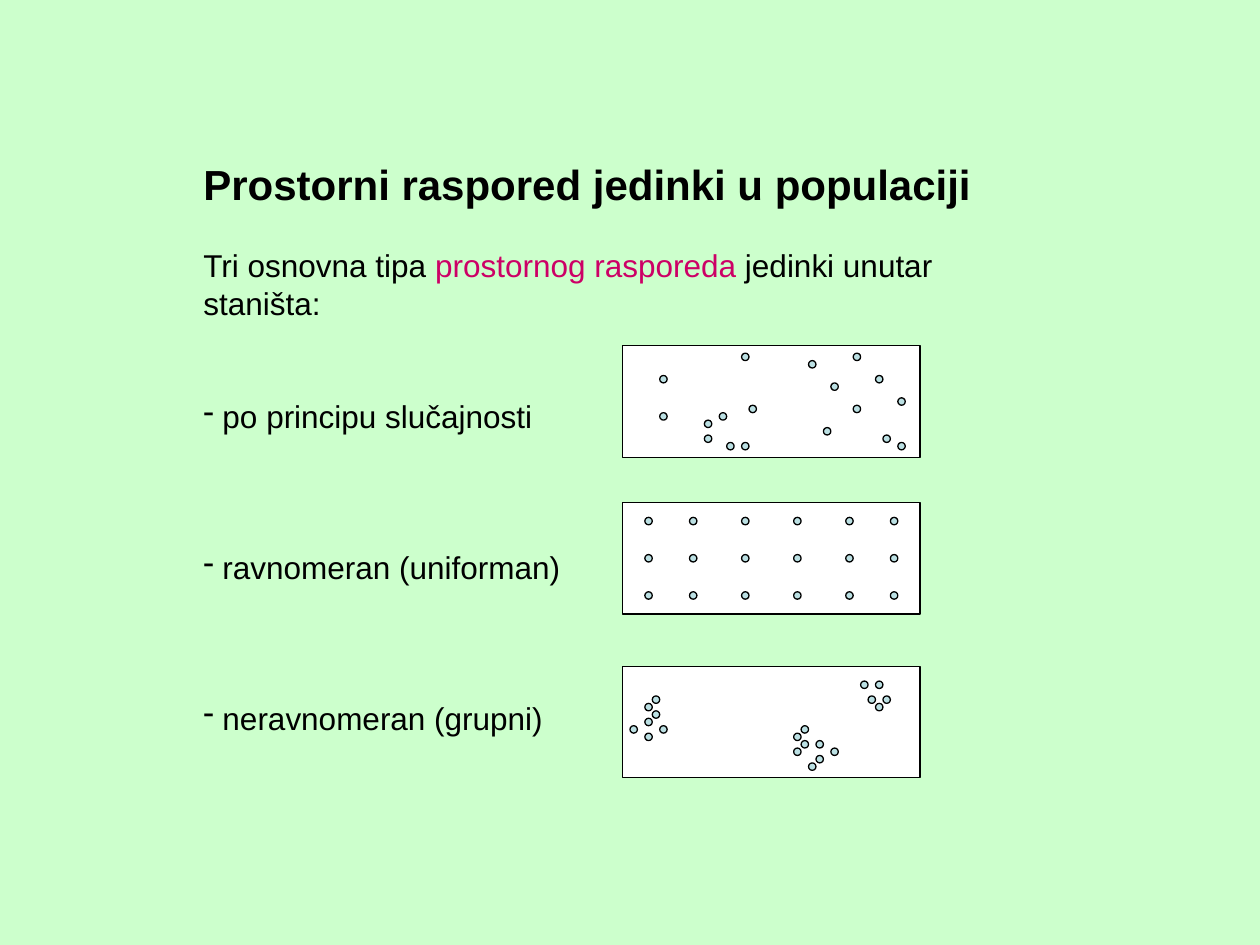
from itertools import product

from pptx import Presentation
from pptx.dml.color import RGBColor
from pptx.enum.shapes import MSO_SHAPE
from pptx.oxml.ns import qn
from pptx.util import Cm, Pt
from lxml import etree

RECT = MSO_SHAPE.RECTANGLE
OVAL = MSO_SHAPE.OVAL


class Theme:
    back = RGBColor(0xCC, 0xFF, 0xCC)
    ink = RGBColor(0, 0, 0)
    accent = RGBColor(0xCC, 0x00, 0x66)
    panel = RGBColor(0xFF, 0xFF, 0xFF)
    dot = RGBColor(0xBB, 0xE0, 0xE3)
    font = "Arial"
    title = Pt(24)
    body = Pt(18)
    line = Pt(0.75)


class Page:
    def __init__(self, deck, theme):
        self.theme = theme
        self.slide = deck.slides.add_slide(deck.slide_layouts[6])
        fill = self.slide.background.fill
        fill.solid()
        fill.fore_color.rgb = theme.back

    def frame(self, x, y, w, h):
        box = self.slide.shapes.add_textbox(Cm(x), Cm(y), Cm(w), Cm(h))
        box.text_frame.word_wrap = True
        return box.text_frame

    def style(self, par, size, gap=0, bold=False):
        par.space_before = Pt(gap)
        par.line_spacing = 1.0
        for run in par.runs:
            run.font.name = self.theme.font
            run.font.size = size
            run.font.bold = bold
            run.font.color.rgb = self.theme.ink

    def bullet(self, par, mark):
        props = par._p.get_or_add_pPr()
        etree.SubElement(props, qn("a:buChar"), char=mark)

    def shape(self, kind, x, y, w, h, color):
        item = self.slide.shapes.add_shape(kind, Cm(x), Cm(y), Cm(w), Cm(h))
        item.shadow.inherit = False
        item.fill.solid()
        item.fill.fore_color.rgb = color
        item.line.color.rgb = self.theme.ink
        item.line.width = self.theme.line

    def panel(self, x, y, dots):
        """Draw a panel of 40 by 15 steps; dots are given in steps."""
        self.shape(RECT, x, y, 40 * STEP, 15 * STEP, self.theme.panel)
        for col, row in dots:
            self.shape(OVAL, x + col * STEP, y + row * STEP, STEP, STEP,
                       self.theme.dot)


STEP = 0.15
LEFT = 12.55

# Dot places in each panel, as column and row
RANDOM = [(5, 4), (5, 9), (11, 10), (11, 12), (13, 9), (14, 13), (16, 1),
          (16, 13), (17, 8), (25, 2), (27, 11), (28, 5), (31, 1), (31, 8),
          (34, 4), (35, 12), (37, 7), (37, 13)]
EVEN = list(product((3, 9, 16, 23, 30, 36), (2, 7, 12)))
GROUPS = [(1, 8), (3, 5), (3, 7), (3, 9), (4, 4), (4, 6), (5, 8),
          (23, 9), (23, 11), (24, 8), (24, 10), (25, 13), (26, 10),
          (26, 12), (28, 11), (32, 2), (33, 4), (34, 2), (34, 5), (35, 4)]


def main():
    deck = Presentation()
    deck.slide_width, deck.slide_height = Cm(25.4), Cm(19.05)
    theme = Theme()
    page = Page(deck, theme)

    # Heading and introduction
    text = page.frame(3.85, 3.07, 17.65, 12.06)
    head = text.paragraphs[0]
    head.text = "Prostorni raspored jedinki u populaciji"
    page.style(head, theme.title, bold=True)

    intro = text.add_paragraph()
    for part in ("Tri osnovna tipa ", "prostornog rasporeda",
                 " jedinki unutar staništa:"):
        intro.add_run().text = part
    page.style(intro, theme.body, gap=21.5)
    intro.runs[1].font.color.rgb = theme.accent

    # Types of distribution
    types = [(" po principu slučajnosti", 43),
             (" ravnomeran (uniforman)", 64.5),
             (" neravnomeran (grupni)", 64.5)]
    for label, gap in types:
        par = text.add_paragraph()
        par.text = label
        page.bullet(par, "-")
        page.style(par, theme.body, gap)

    # Panels
    for top, dots in ((6.97, RANDOM), (10.13, EVEN), (13.43, GROUPS)):
        page.panel(LEFT, top, dots)

    deck.save("out.pptx")


if __name__ == "__main__":
    main()
